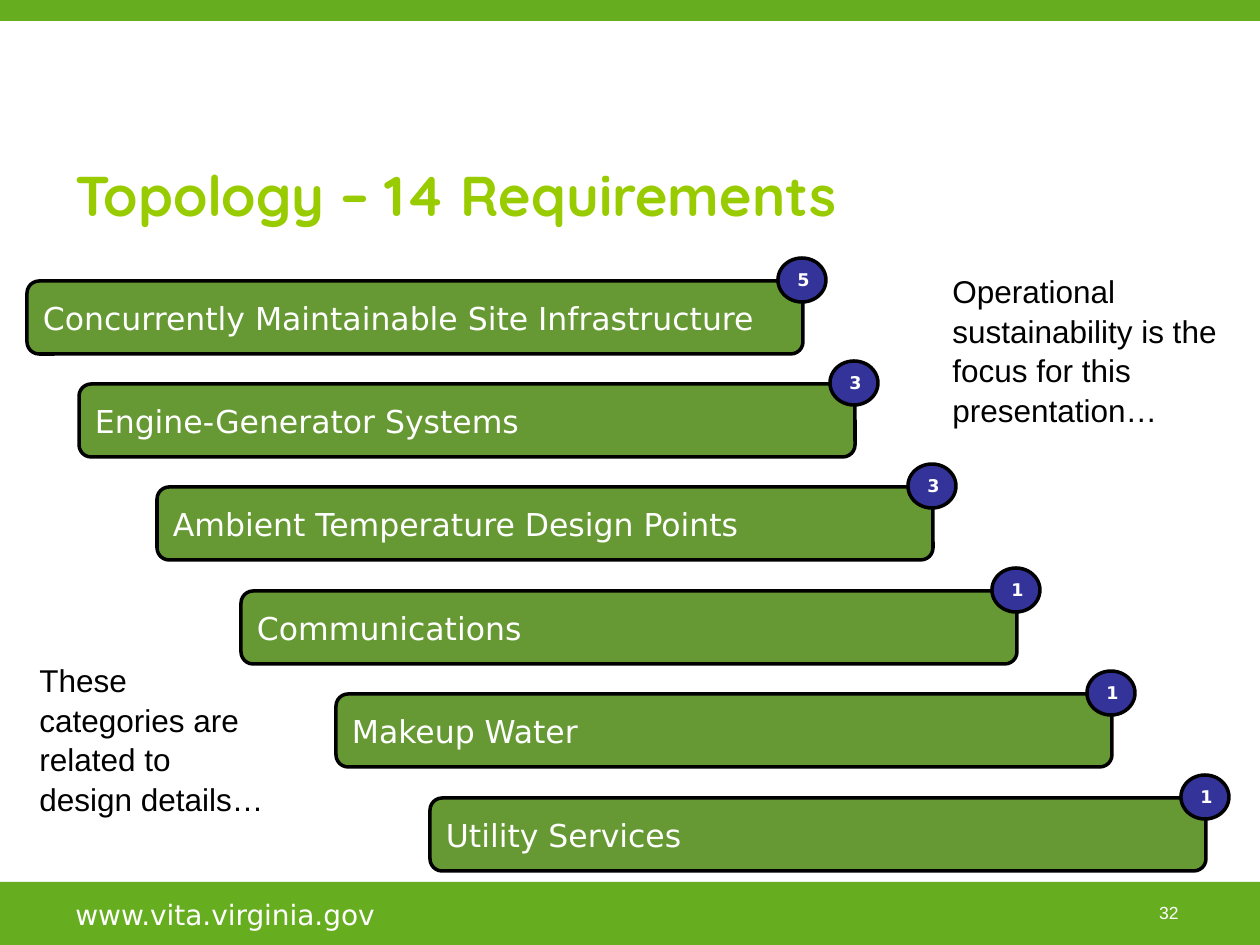
from pptx import Presentation
from pptx.dml.color import RGBColor
from pptx.enum.shapes import MSO_SHAPE
from pptx.enum.text import MSO_ANCHOR, PP_ALIGN
from pptx.util import Emu, Pt

PX_PER_INCH = 126
SLIDE_W, SLIDE_H = 1260, 945

BAND_GREEN = RGBColor(0x66, 0xAE, 0x20)
TITLE_GREEN = RGBColor(0x99, 0xCC, 0x00)
BAR_GREEN = RGBColor(0x66, 0x99, 0x33)
BADGE_BLUE = RGBColor(0x33, 0x33, 0x99)
BLACK = RGBColor(0, 0, 0)
WHITE = RGBColor(0xFF, 0xFF, 0xFF)

# Topic, number of requirements, left edge of the bar
REQUIREMENTS = [
    ("Concurrently Maintainable Site Infrastructure", 5, 27),
    ("Engine-Generator Systems", 3, 79),
    ("Ambient Temperature Design Points", 3, 157),
    ("Communications", 1, 241),
    ("Makeup Water", 1, 336),
    ("Utility Services", 1, 430),
]


def px(length):
    return Emu(round(length * 914400 / PX_PER_INCH))


def write(shape, text, size, font, color, bold=False,
          align=PP_ALIGN.LEFT, anchor=MSO_ANCHOR.MIDDLE, wrap=True):
    frame = shape.text_frame
    frame.word_wrap = wrap
    frame.vertical_anchor = anchor
    paragraph = frame.paragraphs[0]
    paragraph.text = text
    paragraph.alignment = align
    paragraph.font.size = Pt(size)
    paragraph.font.name = font
    paragraph.font.bold = bold
    paragraph.font.color.rgb = color
    return frame


def add_text(slide, box, *args, **kwargs):
    return write(slide.shapes.add_textbox(*map(px, box)), *args, **kwargs)


def add_panel(shapes, preset, box, fill, outlined=True):
    panel = shapes.add_shape(preset, *map(px, box))
    panel.shadow.inherit = False
    panel.fill.solid()
    panel.fill.fore_color.rgb = fill
    if outlined:
        panel.line.color.rgb = BLACK
        panel.line.width = Pt(2)
    else:
        panel.line.fill.background()
    return panel


def add_header(slide, left, top, width, height):
    add_panel(slide.shapes, MSO_SHAPE.RECTANGLE, (left, top, width, height),
              BAND_GREEN, outlined=False)


def add_footer(slide, left, top, width, height):
    add_panel(slide.shapes, MSO_SHAPE.RECTANGLE, (left, top, width, height),
              BAND_GREEN, outlined=False)
    add_text(slide, (left + 63, top + 9, 336, 44), "www.vita.virginia.gov",
             16, "DejaVu Sans", WHITE, anchor=MSO_ANCHOR.TOP)
    page_number = add_text(slide, (left + 1155, top + 19, 28, 24), "32", 10,
                           "Arial", WHITE, align=PP_ALIGN.CENTER, wrap=False)
    page_number.margin_left = page_number.margin_right = 0
    page_number.margin_top = page_number.margin_bottom = 0


def add_requirement(slide, left, top, width, height, topic, count):
    group = slide.shapes.add_group_shape()
    bar = add_panel(group.shapes, MSO_SHAPE.ROUNDED_RECTANGLE,
                    (left, top, width, height), BAR_GREEN)
    write(bar, topic, 18, "DejaVu Sans", WHITE)
    # Count badge over the top right corner
    badge = add_panel(group.shapes, MSO_SHAPE.OVAL,
                      (left + width - 25, top - 23, 48, 44), BADGE_BLUE)
    digit = write(badge, str(count), 10, "DejaVu Sans", WHITE, bold=True,
                  align=PP_ALIGN.CENTER, wrap=False)
    digit.margin_left, digit.margin_right = px(3), 0
    digit.margin_top = digit.margin_bottom = 0


def add_staircase(slide, top, height):
    bar_w, bar_h = 776, 73
    steps = len(REQUIREMENTS) - 1
    for step, (topic, count, left) in enumerate(REQUIREMENTS):
        bar_top = top + step * (height - bar_h) // steps
        add_requirement(slide, left, bar_top, bar_w, bar_h, topic, count)


def add_remark(slide, left, top, width, height, text):
    frame = add_text(slide, (left, top, width, height), text, 18, "Arial",
                     BLACK, anchor=MSO_ANCHOR.TOP)
    frame.paragraphs[0].line_spacing = 1.05


def main():
    prs = Presentation()
    prs.slide_width, prs.slide_height = px(SLIDE_W), px(SLIDE_H)
    slide = prs.slides.add_slide(prs.slide_layouts[6])

    # Frame and title
    add_footer(slide, 0, 882, SLIDE_W, 63)
    add_header(slide, 0, 0, SLIDE_W, 21)
    add_text(slide, (63, 136, 1134, 116), "Topology – 14 Requirements",
             32, "Quicksand", TITLE_GREEN, bold=True)

    # Requirement bars and remarks beside them
    add_staircase(slide, 281, 590)
    add_remark(slide, 27, 653, 250, 165,
               "These categories are related to design details…")
    add_remark(slide, 940, 264, 341, 165,
               "Operational sustainability is the focus for this presentation…")

    prs.save("out.pptx")


if __name__ == "__main__":
    main()
